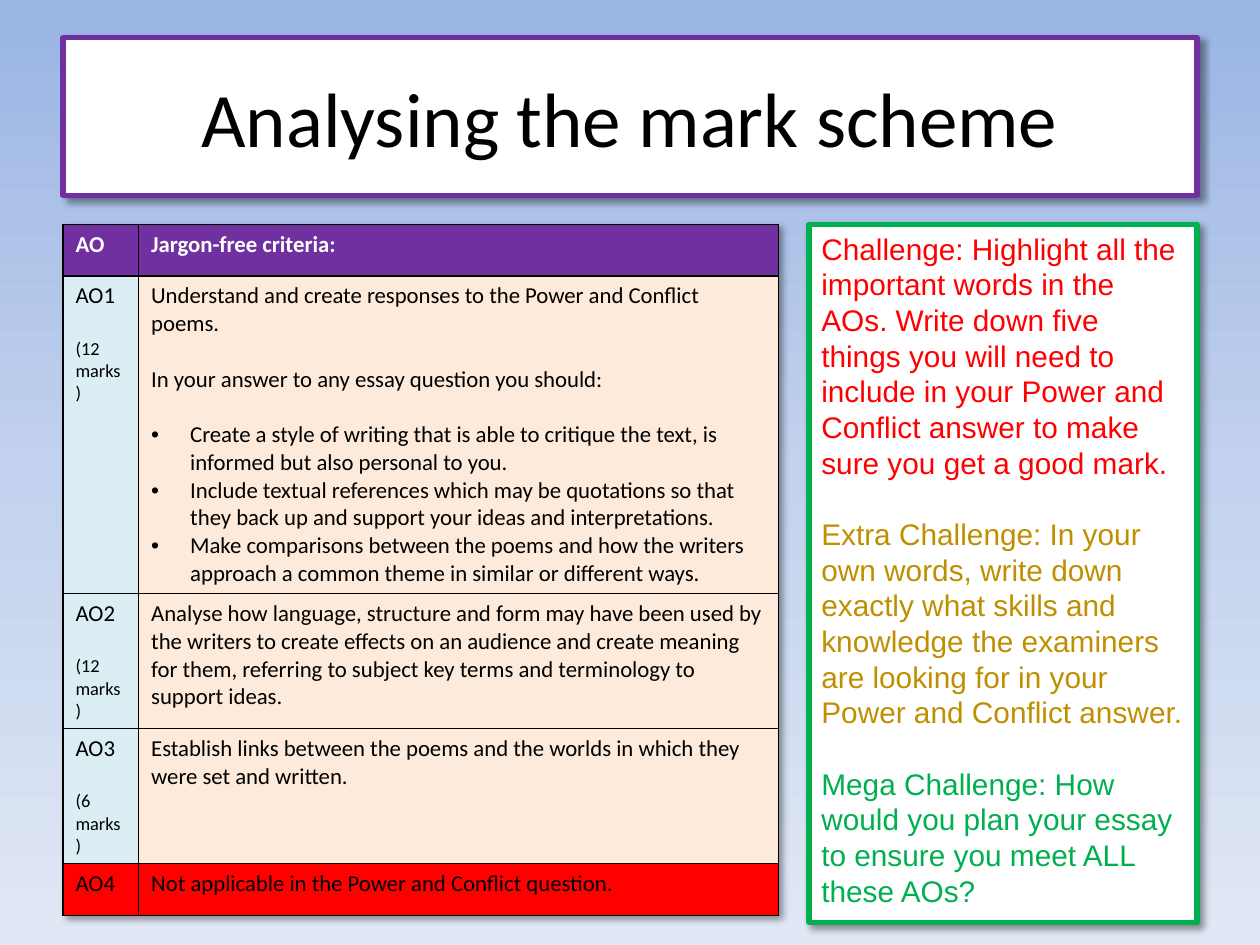
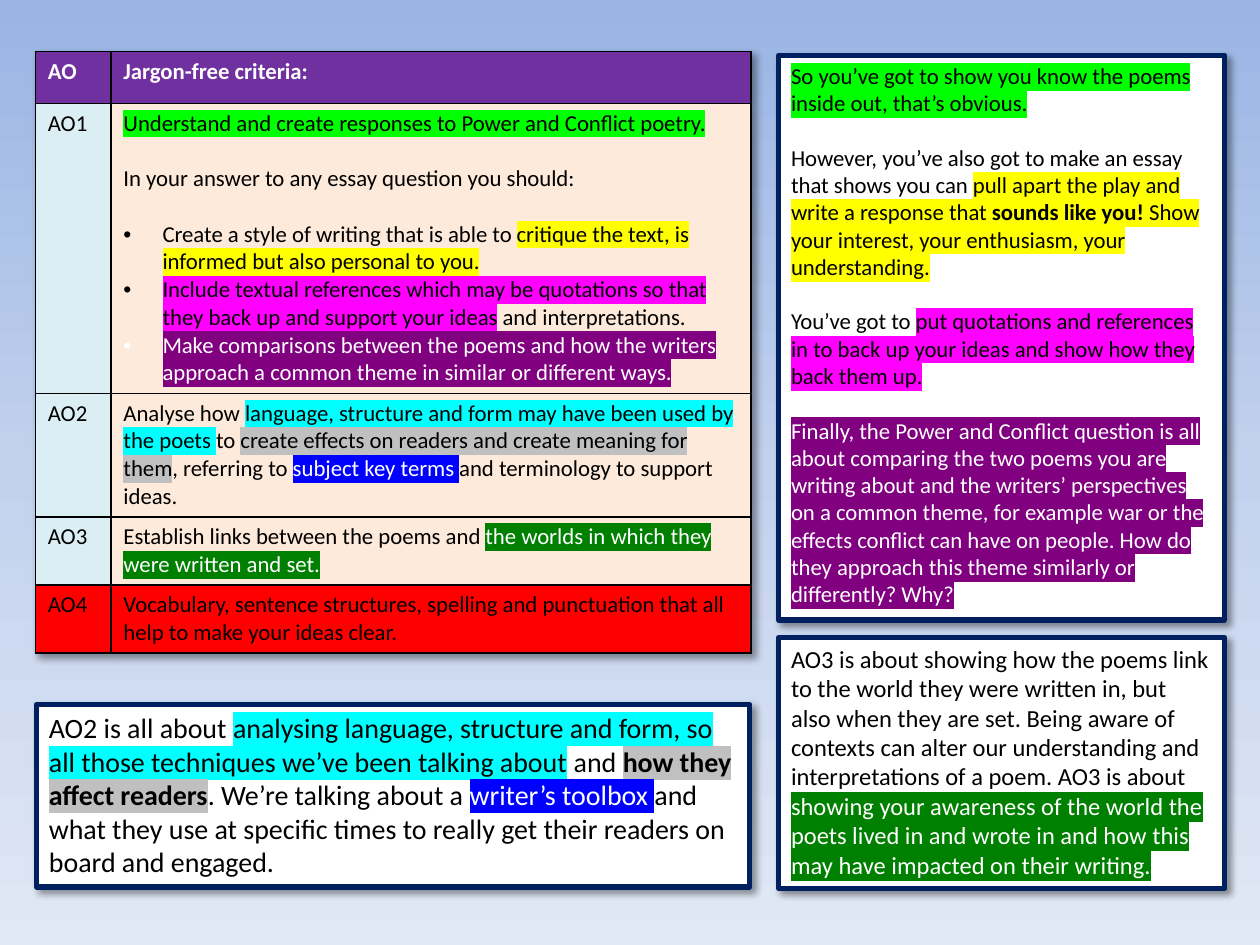
from dataclasses import dataclass

from pptx import Presentation
from pptx import util as u
from pptx.dml.color import RGBColor
from pptx.enum import shapes, text
from pptx.oxml import parse_xml
from pptx.oxml.ns import nsdecls, qn


@dataclass(frozen=True)
class Theme:
    heading_font: str = "Calibri"
    challenge_font: str = "Arial"
    black: str = "000000"
    white: str = "FFFFFF"
    purple: str = "7030A0"
    green: str = "00B050"
    navy: str = "002060"
    red: str = "FF0000"
    gold: str = "BF8F00"
    ao_fill: str = "DBEEF4"
    criteria_fill: str = "FDEADA"
    sky: tuple = ((0, "9AB5E4"), (50, "C2D1ED"), (100, "E1E8F5"))
    title_size: float = 44
    challenge_size: float = 17
    body_size: float = 13
    marks_size: float = 10.5
    ao2_size: float = 16
    ao3_size: float = 14
    border: float = 3
    grid: float = 1


@dataclass(frozen=True)
class Run:
    words: str
    highlight: str = ""
    ink: str = ""
    bold: bool = False


@dataclass(frozen=True)
class Para:
    runs: tuple
    gap: bool = False
    bullet: bool = False
    size: float = 0


def para(*runs, **options):
    """Make a paragraph, taking bare strings as plain runs."""
    return Para(tuple(Run(r) if isinstance(r, str) else r for r in runs), **options)


# Highlighter pens, one for each idea in the mark scheme
def know(words):
    return Run(words, "00FF00")


def personal(words, bold=False):
    return Run(words, "FFFF00", bold=bold)


def quote(words):
    return Run(words, "FF00FF")


def compare(words):
    return Run(words, "800080", THEME.white)


def technique(words):
    return Run(words, "00FFFF")


def effect(words, bold=False):
    return Run(words, "C0C0C0", bold=bold)


def term(words):
    return Run(words, "0000FF", THEME.white)


def context(words):
    return Run(words, "008000", THEME.white)


THEME = Theme()
TITLE_ONLY, BLANK = 5, 6
SHADOW = (f'<a:outerShdw {nsdecls("a")} blurRad="50800" dist="38100" dir="2700000" '
          'algn="tl" rotWithShape="0"><a:srgbClr val="000000"><a:alpha val="40000"/>'
          '</a:srgbClr></a:outerShdw>')


class Deck:
    def __init__(self, theme):
        self.theme = theme
        self.prs = Presentation()
        self.prs.slide_width, self.prs.slide_height = u.Inches(10), u.Inches(7.5)
        self.slide = None
        self.paint_background()

    def paint_background(self):
        master = self.prs.slide_master
        fill = master.background.fill
        fill.gradient()
        fill.gradient_angle = 270
        stops = master.element.find(".//" + qn("a:gsLst"))
        for stop in list(stops):
            stops.remove(stop)
        for percent, colour in self.theme.sky:
            stops.append(parse_xml(f'<a:gs {nsdecls("a")} pos="{percent * 1000}">'
                                   f'<a:srgbClr val="{colour}"/></a:gs>'))

    def new_slide(self, layout):
        self.slide = self.prs.slides.add_slide(self.prs.slide_layouts[layout])

    def frame(self, panel, border):
        """Give a panel its white fill, thick border and soft shadow."""
        panel.fill.solid()
        panel.fill.fore_color.rgb = RGBColor.from_string(self.theme.white)
        panel.line.color.rgb = RGBColor.from_string(border)
        panel.line.width = u.Pt(self.theme.border)
        panel.shadow.inherit = False
        panel._element.spPr.find(qn("a:effectLst")).append(parse_xml(SHADOW))

    def add_text(self, body, paras, size, font, ink="", bold=False, leading=0):
        """Fill a text frame; leading, if given, is a fixed multiple of the size."""
        for number, item in enumerate(paras):
            line = body.paragraphs[0] if number == 0 else body.add_paragraph()
            line.alignment = text.PP_ALIGN.LEFT
            if leading:
                line.line_spacing = u.Pt(size * leading)
            if item.gap:
                line.space_before = u.Pt(size * (leading or 1.22))
            if item.bullet:
                props = line._p.get_or_add_pPr()
                props.set("marL", str(u.Inches(0.31)))
                props.set("indent", str(u.Inches(-0.31)))
                props.append(parse_xml(f'<a:buFont {nsdecls("a")} typeface="Arial"/>'))
                props.append(parse_xml(f'<a:buChar {nsdecls("a")} char="•"/>'))
            for part in item.runs:
                run = line.add_run()
                run.text = part.words
                run.font.size = u.Pt(item.size or size)
                run.font.bold = bold or part.bold
                run.font.color.rgb = RGBColor.from_string(part.ink or ink or self.theme.black)
                if part.highlight:
                    run._r.get_or_add_rPr().append(parse_xml(
                        f'<a:highlight {nsdecls("a")}><a:srgbClr val="{part.highlight}"/>'
                        '</a:highlight>'))
                run.font.name = font

    def title(self, words, left, top, width, height):
        heading = self.slide.shapes.title
        heading.left, heading.top = u.Inches(left), u.Inches(top)
        heading.width, heading.height = u.Inches(width), u.Inches(height)
        self.frame(heading, self.theme.purple)
        body = heading.text_frame
        body.vertical_anchor = text.MSO_ANCHOR.MIDDLE
        self.add_text(body, [para(words)], self.theme.title_size, self.theme.heading_font)
        body.paragraphs[0].alignment = text.PP_ALIGN.CENTER

    def panel(self, paras, left, top, width, height, border, size, font):
        panel = self.slide.shapes.add_shape(
            shapes.MSO_SHAPE.RECTANGLE, u.Inches(left), u.Inches(top),
            u.Inches(width), u.Inches(height))
        self.frame(panel, border)
        body = panel.text_frame
        body.word_wrap = True
        body.vertical_anchor = text.MSO_ANCHOR.TOP
        self.add_text(body, paras, size, font, leading=1.2)

    def cell(self, cell, paras, fill, **style):
        props = cell._tc.get_or_add_tcPr()
        for side in "LRTB":
            props.append(parse_xml(
                f'<a:ln{side} {nsdecls("a")} w="{u.Pt(self.theme.grid)}"><a:solidFill>'
                f'<a:srgbClr val="{self.theme.black}"/></a:solidFill></a:ln{side}>'))
        cell.fill.solid()
        cell.fill.fore_color.rgb = RGBColor.from_string(fill)
        self.add_text(cell.text_frame, paras, self.theme.body_size,
                      self.theme.heading_font, **style)

    def criteria_table(self, rows, left, top, heights):
        """Draw the AO grid; each row is (AO name, marks, criteria paragraphs)."""
        t = self.theme
        widths = (0.6, 5.08)
        frame = self.slide.shapes.add_table(
            len(rows) + 1, len(widths), u.Inches(left), u.Inches(top),
            u.Inches(sum(widths)), u.Inches(sum(heights)))
        grid = frame.table
        grid.first_row = grid.horz_banding = False
        shadow = parse_xml(f'<a:effectLst {nsdecls("a")}/>')
        shadow.append(parse_xml(SHADOW))
        grid._tbl.tblPr.insert(0, shadow)
        for column, width in zip(grid.columns, widths):
            column.width = u.Inches(width)
        for row, height in zip(grid.rows, heights):
            row.height = u.Inches(height)
        for column, heading in enumerate(("AO", "Jargon-free criteria:")):
            self.cell(grid.cell(0, column), [para(heading)], t.purple,
                      ink=t.white, bold=True)
        for number, (ao, marks, criteria) in enumerate(rows, 1):
            label = [para(ao)]
            if marks:
                label.append(para(marks, gap=True, size=t.marks_size))
            last = number == len(rows)
            self.cell(grid.cell(number, 0), label, t.red if last else t.ao_fill)
            self.cell(grid.cell(number, 1), criteria, t.red if last else t.criteria_fill)


def mark_scheme(deck):
    t = deck.theme
    deck.new_slide(TITLE_ONLY)
    deck.title("Analysing the mark scheme", 0.5, 0.3, 9, 1.25)
    challenges = [
        para(Run("Challenge: Highlight all the important words in the AOs. Write down five "
                 "things you will need to include in your Power and Conflict answer to make "
                 "sure you get a good mark.", ink=t.red)),
        para(Run("Extra Challenge: In your own words, write down exactly what skills and "
                 "knowledge the examiners are looking for in your Power and Conflict answer.",
                 ink=t.gold), gap=True),
        para(Run("Mega Challenge: How would you plan your essay to ensure you meet ALL "
                 "these AOs?", ink=t.green), gap=True),
    ]
    deck.panel(challenges, 6.42, 1.78, 3.08, 5.54, t.green, t.challenge_size,
               t.challenge_font)
    deck.criteria_table([
        ("AO1", "(12 marks)", [
            para("Understand and create responses to the Power and Conflict poems."),
            para("In your answer to any essay question you should:", gap=True),
            para("Create a style of writing that is able to critique the text, is informed "
                 "but also personal to you.", gap=True, bullet=True),
            para("Include textual references which may be quotations so that they back up "
                 "and support your ideas and interpretations.", bullet=True),
            para("Make comparisons between the poems and how the writers approach a common "
                 "theme in similar or different ways.", bullet=True)]),
        ("AO2", "(12 marks)", [
            para("Analyse how language, structure and form may have been used by the writers "
                 "to create effects on an audience and create meaning for them, referring to "
                 "subject key terms and terminology to support ideas.")]),
        ("AO3", "(6 marks)", [
            para("Establish links between the poems and the worlds in which they were set "
                 "and written.")]),
        ("AO4", "", [para("Not applicable in the Power and Conflict question.")]),
    ], 0.5, 1.78, (0.41, 2.49, 0.97, 0.88, 0.41))


def highlighted_scheme(deck):
    t = deck.theme
    deck.new_slide(BLANK)
    deck.criteria_table([
        ("AO1", "", [
            para(know("Understand and create responses to Power and Conflict poetry.")),
            para("In your answer to any essay question you should:", gap=True),
            para("Create a style of writing that is able to ",
                 personal("critique the text, is informed but also personal to you."),
                 gap=True, bullet=True),
            para(quote("Include textual references which may be quotations so that they "
                       "back up and support your ideas"), " and interpretations.",
                 bullet=True),
            para(compare("Make comparisons between the poems and how the writers approach "
                         "a common theme in similar or different ways."), bullet=True)]),
        ("AO2", "", [
            para("Analyse how ",
                 technique("language, structure and form may have been used by the poets "),
                 "to ", effect("create effects on readers and create meaning for them"),
                 ", referring to ", term("subject key terms "),
                 "and terminology to support ideas.")]),
        ("AO3", "", [
            para("Establish links between the poems and ",
                 context("the worlds in which they were written and set."))]),
        ("AO4", "", [
            para("Vocabulary, sentence structures, spelling and punctuation that all help "
                 "to make your ideas clear.")]),
    ], 0.28, 0.41, (0.41, 2.3, 0.98, 0.54, 0.54))

    ao1_notes = [
        para(know("So you’ve got to show you know the poems inside out, that’s obvious.")),
        para("However, you’ve also got to make an essay that shows you can ",
             personal("pull apart the play and write a response that "),
             personal("sounds like you! ", bold=True),
             personal("Show your interest, your enthusiasm, your understanding."), gap=True),
        para("You’ve got to ",
             quote("put quotations and references in to back up your ideas and show how "
                   "they back them up."), gap=True),
        para(compare("Finally, the Power and Conflict question is all about comparing the "
                     "two poems you are writing about and the writers’ perspectives on a "
                     "common theme, for example war or the effects conflict can have on "
                     "people. How do they approach this theme similarly or differently? "
                     "Why?"), gap=True),
    ]
    ao2_notes = [
        para("AO2 is all about ",
             technique("analysing language, structure and form, so all those techniques "
                       "we’ve been talking about"),
             " and ", effect("how they affect readers", bold=True),
             ". We’re talking about a ", term("writer’s toolbox "),
             "and what they use at specific times to really get their readers on board "
             "and engaged."),
    ]
    ao3_notes = [
        para("AO3 is about showing how the poems link to the world they were written in, "
             "but also when they are set. Being aware of contexts can alter our "
             "understanding and interpretations of a poem. AO3 is about ",
             context("showing your awareness of the world the poets lived in and wrote in "
                     "and how this may have impacted on their writing.")),
    ]
    for notes, place, size in (
            (ao1_notes, (6.18, 0.44, 3.54, 4.48), t.body_size),
            (ao2_notes, (0.29, 5.59, 5.66, 1.45), t.ao2_size),
            (ao3_notes, (6.18, 5.06, 3.54, 1.99), t.ao3_size)):
        deck.panel(notes, *place, t.navy, size, t.heading_font)


def main():
    deck = Deck(THEME)
    mark_scheme(deck)
    highlighted_scheme(deck)
    deck.prs.save("out.pptx")


if __name__ == "__main__":
    main()
